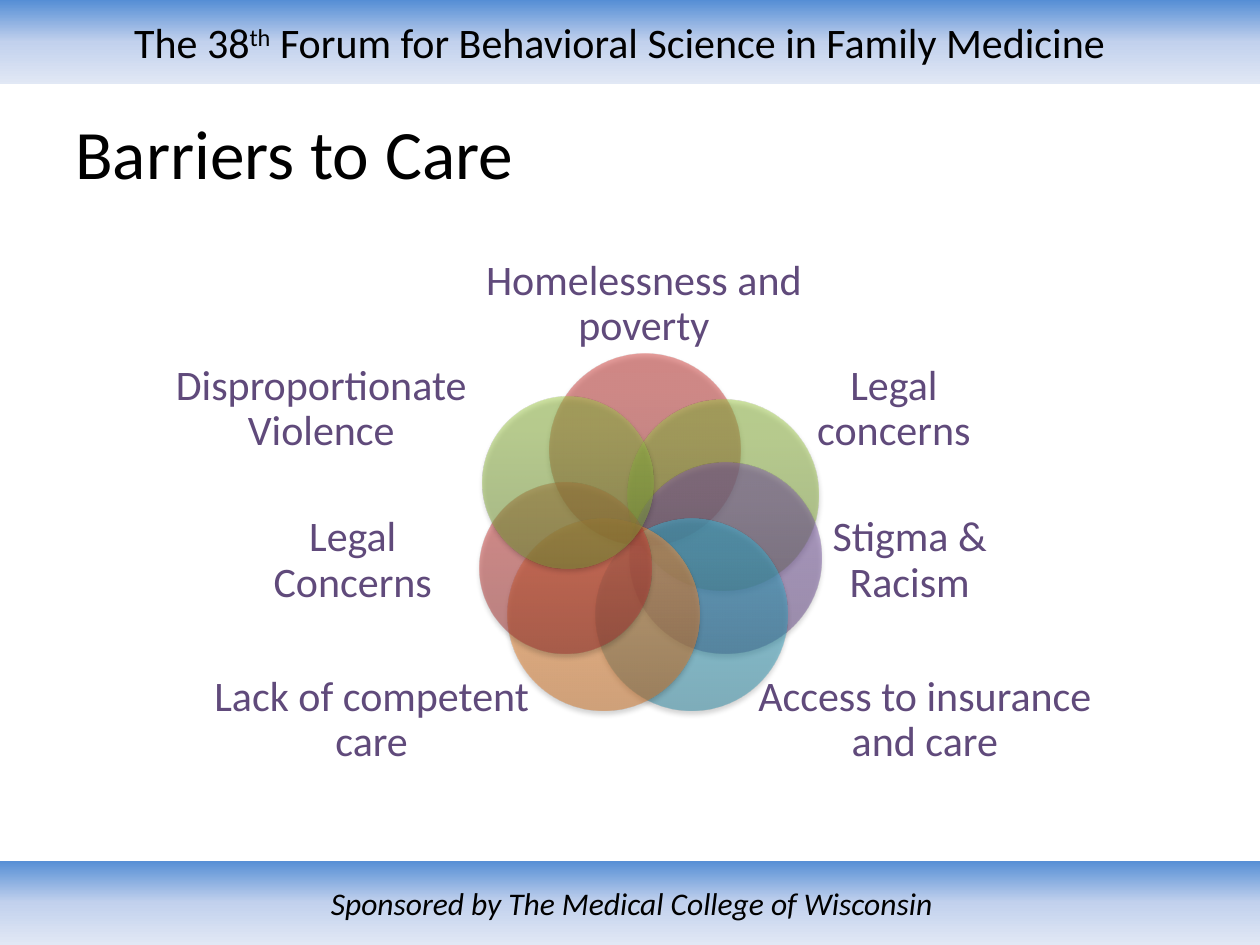
import pptx
import pptx.util
from lxml import etree
from pptx.dml.color import RGBColor
from pptx.enum.shapes import MSO_SHAPE
from pptx.enum.text import MSO_ANCHOR, PP_ALIGN
from pptx.oxml.ns import qn

COLUMNS, ROWS = 100, 75
FONT = "Calibri"
BLACK, PURPLE = "000000", "604A7B"
BAND_STOPS = [(0, "558ED5"), (50, "C2D1ED"), (100, "E1E8F5")]
RED = [(0, "9C2F2D"), (80, "CB3E3A"), (100, "CE3B37")]
GREEN = [(0, "779737"), (80, "9BC348"), (100, "9DC746")]
VIOLET = [(0, "5F4480"), (80, "7B58A6"), (100, "7C57A8")]
BLUE = [(0, "2A88A2"), (80, "37B1D2"), (100, "34B4D6")]
ORANGE = [(0, "CC6E20"), (80, "FF9034"), (100, "FF9136")]
LARGE, SMALL = 15.2, 13.6
BARRIERS = [
    ("Homelessness and poverty", RED, LARGE, (33.6, 8.1), (28.5, 0, 25.2, 8.3)),
    ("Legal concerns", GREEN, LARGE, (39.8, 11.7), (53.6, 7.9, 14.7, 9.2)),
    ("Stigma & Racism", VIOLET, LARGE, (40, 16.7), (55, 19.6, 14.4, 9.8)),
    ("Access to insurance and care", BLUE, LARGE, (37.3, 21.2), (48.5, 32.7, 29.8, 9)),
    ("Lack of competent care", ORANGE, LARGE, (30.3, 21.2), (5.1, 32.7, 28.8, 9)),
    ("Legal Concerns", RED, SMALL, (28.1, 18.3), (10.8, 19.6, 14.4, 9.8)),
    ("Disproportionate Violence", GREEN, SMALL, (28.3, 11.5), (0.2, 7.9, 30.6, 9.2)),
]


def color(value):
    """Turn a hex string into a colour."""
    return RGBColor.from_string(value)


def place(deck, left, top, width, height):
    """Convert grid columns and rows to slide lengths."""
    column, row = deck.slide_width / COLUMNS, deck.slide_height / ROWS
    return [round(n) for n in (left * column, top * row, width * column, height * row)]


def fill_gradient(shape, stops, angle, opacity=100):
    """Fill a shape with a linear gradient, without line or shadow."""
    shape.fill.gradient()
    shape.line.fill.background()
    shape.shadow.inherit = False
    gradient = shape._element.spPr.find(qn("a:gradFill"))
    stop_list = gradient.find(qn("a:gsLst"))
    for old_stop in list(stop_list):
        stop_list.remove(old_stop)
    for position, value in stops:
        stop = etree.SubElement(stop_list, qn("a:gs"), pos=str(position * 1000))
        tint = etree.SubElement(stop, qn("a:srgbClr"), val=value)
        if opacity < 100:
            etree.SubElement(tint, qn("a:alpha"), val=str(opacity * 1000))
    gradient.find(qn("a:lin")).set("ang", str(angle * 60000))


def add_shadow(shape):
    """Give a shape a soft shadow below it."""
    effects = shape._element.spPr.find(qn("a:effectLst"))
    shadow = etree.SubElement(
        effects, qn("a:outerShdw"), blurRad=str(pptx.util.Pt(3.1)),
        dist=str(pptx.util.Pt(1.8)), dir="5400000", rotWithShape="0")
    tint = etree.SubElement(shadow, qn("a:srgbClr"), val=BLACK)
    etree.SubElement(tint, qn("a:alpha"), val="35000")


def write(shape, pieces, size, value=BLACK, align=PP_ALIGN.CENTER, italic=False):
    """Write one paragraph of runs, centred vertically, and return it."""
    frame = shape.text_frame
    frame.word_wrap = True
    frame.vertical_anchor = MSO_ANCHOR.MIDDLE
    para = frame.paragraphs[0]
    para.alignment = align
    for piece in pieces:
        span = para.add_run()
        span.text = piece
        span.font.name = FONT
        span.font.size = pptx.util.Pt(size)
        span.font.italic = italic
        span.font.color.rgb = color(value)
    return para


def add_band(deck, page, box, pieces, size, italic=False):
    """Add a gradient band with a line of text."""
    band = page.shapes.add_shape(MSO_SHAPE.RECTANGLE, *place(deck, *box))
    fill_gradient(band, BAND_STOPS, 90)
    write(band, pieces, size, italic=italic)
    return band


def add_header(deck, page, box):
    """Add the forum name with its raised ordinal."""
    pieces = ["The 38", "th", " Forum for Behavioral Science in Family Medicine"]
    band = add_band(deck, page, box, pieces, 24)
    band.text_frame.margin_right = pptx.util.Inches(0.26)
    ordinal = band.text_frame.paragraphs[0].runs[1]
    ordinal.font._element.set("baseline", "30000")


def add_title(deck, page, box):
    """Add the slide title."""
    title = page.shapes.add_textbox(*place(deck, *box))
    write(title, ["Barriers to Care"], 39.6, align=PP_ALIGN.LEFT)


def add_barriers(deck, page, box):
    """Add the ring of overlapping circles and their labels."""
    left, top = box
    for label, stops, size, (x, y), (label_x, label_y, width, height) in BARRIERS:
        circle = page.shapes.add_shape(
            MSO_SHAPE.OVAL, *place(deck, left + x, top + y, size, size))
        fill_gradient(circle, stops, 270, opacity=50)
        add_shadow(circle)
        caption = page.shapes.add_textbox(
            *place(deck, left + label_x, top + label_y, width, height))
        frame = caption.text_frame
        frame.margin_left = frame.margin_right = 0
        frame.margin_top = frame.margin_bottom = 0
        write(caption, [label], 24, PURPLE).line_spacing = 0.9


def main():
    """Build and save the slide."""
    deck = pptx.Presentation()
    deck.slide_width = pptx.util.Inches(10)
    deck.slide_height = pptx.util.Inches(7.5)
    page = deck.slides.add_slide(deck.slide_layouts[6])
    add_header(deck, page, (0, 0, COLUMNS, 6.7))
    add_band(deck, page, (0, ROWS - 6.7, COLUMNS + 0.3, 6.7),
             ["Sponsored by The Medical College of Wisconsin"], 18, italic=True)
    add_title(deck, page, (5, 8.3, 90, 7.5))
    add_barriers(deck, page, (10, 20))
    deck.save("out.pptx")


if __name__ == "__main__":
    main()
